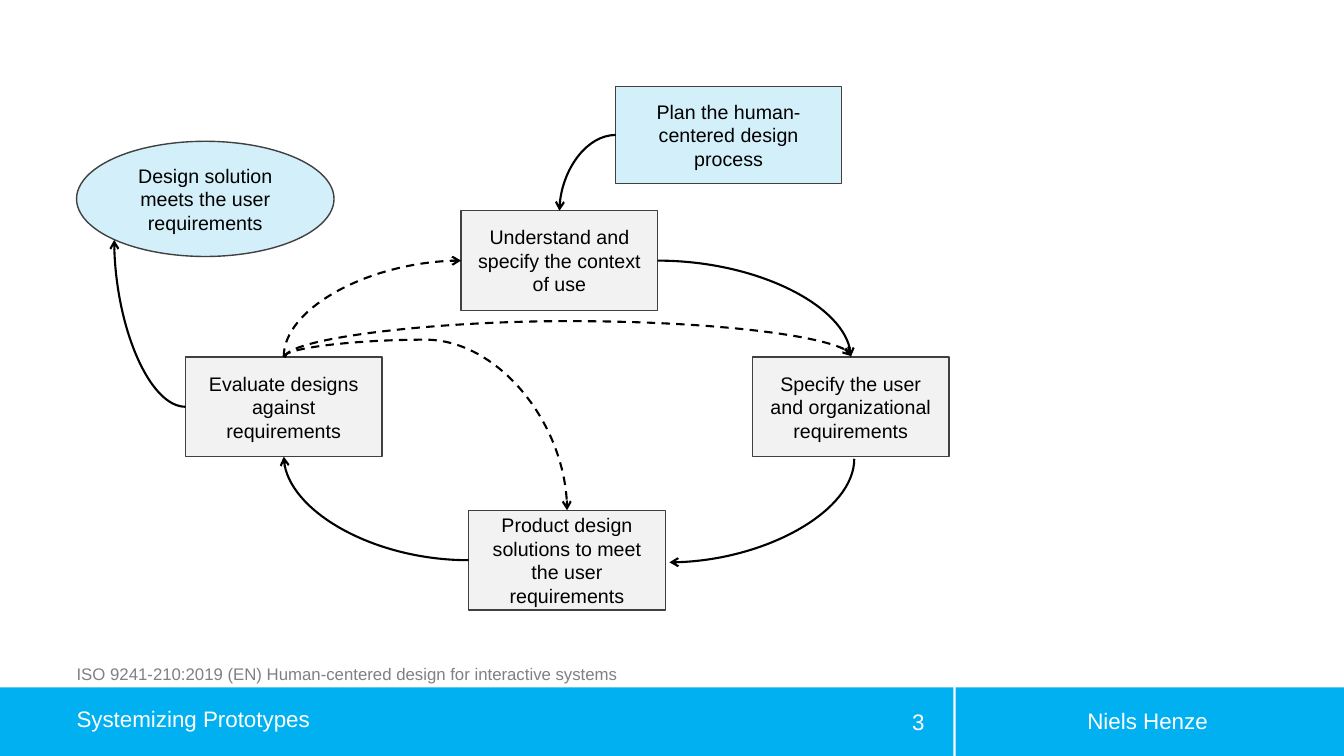
from lxml import etree
from pptx import Presentation
from pptx import util as u
from pptx.dml.color import RGBColor
from pptx.enum import dml, shapes, text
from pptx.oxml.ns import qn

BLACK = RGBColor(0, 0, 0)
WHITE = RGBColor(255, 255, 255)
BLUE = RGBColor(0x00, 0xB0, 0xF0)
PALE_BLUE = RGBColor(0xD3, 0xEF, 0xF9)
PALE_GREY = RGBColor(0xF2, 0xF2, 0xF2)
MID_GREY = RGBColor(0x80, 0x80, 0x80)
DARK_GREY = RGBColor(0x40, 0x40, 0x40)

RECTANGLE = shapes.MSO_SHAPE.RECTANGLE
OVAL = shapes.MSO_SHAPE.OVAL
LEFT, CENTER, RIGHT = text.PP_ALIGN.LEFT, text.PP_ALIGN.CENTER, text.PP_ALIGN.RIGHT

STEP_SIZE = (140.4, 71.3)
DEFAULT_INSETS = (7.2, 3.6, 7.2, 3.6)


def write(shape, words, size, color, align, insets=DEFAULT_INSETS, wrap=True):
    frame = shape.text_frame
    frame.word_wrap = wrap
    frame.vertical_anchor = text.MSO_ANCHOR.MIDDLE
    frame.margin_left, frame.margin_top, frame.margin_right, frame.margin_bottom = map(u.Pt, insets)
    para = frame.paragraphs[0]
    para.alignment = align
    span = para.add_run()
    span.text = words
    span.font.name = "Arial"
    span.font.size = u.Pt(size)
    span.font.color.rgb = color


def add_filled(page, kind, place, fill):
    shape = page.shapes.add_shape(kind, *map(u.Pt, place))
    shape.shadow.inherit = False
    shape.fill.solid()
    shape.fill.fore_color.rgb = fill
    shape.line.fill.background()
    return shape


def add_node(page, kind, place, fill, words):
    node = add_filled(page, kind, place, fill)
    node.line.color.rgb = DARK_GREY
    node.line.width = u.Pt(1)
    write(node, words, 14, BLACK, CENTER)
    return node


def add_step(page, left, top, words):
    return add_node(page, RECTANGLE, (left, top, *STEP_SIZE), PALE_GREY, words)


def add_label(page, place, words, size, color, align, **layout):
    box = page.shapes.add_textbox(*map(u.Pt, place))
    write(box, words, size, color, align, **layout)
    return box


def middle(node, side, dx=0, dy=0):
    """Point at the middle of a side, in points, moved by dx and dy."""
    across, down = {"top": (0.5, 0), "left": (0, 0.5),
                    "bottom": (0.5, 1), "right": (1, 0.5)}[side]
    return (u.Length(node.left + across * node.width).pt + dx,
            u.Length(node.top + down * node.height).pt + dy)


def add_curve(page, start, end, upright=False, dashed=False, crest=None):
    """Curved arrow; upright leaves vertically, crest is the height of its bend."""
    (x1, y1), (x2, y2) = start, end
    width, height = abs(x2 - x1), abs(y2 - y1)
    right, down = x2 > x1, y2 > y1
    if upright:
        width, height = height, width
        turn, flip_h, flip_v = (270 if right == down else 90), right, not down
    else:
        turn, flip_h, flip_v = (0 if right else 180), False, right != down
    left, top = (x1 + x2 - width) / 2, (y1 + y2 - height) / 2
    curve = page.shapes.add_connector(
        shapes.MSO_CONNECTOR.CURVE,
        *map(u.Pt, (left, top, left + width, top + height)))
    curve.line.color.rgb = BLACK
    curve.line.width = u.Pt(1.5)
    if dashed:
        curve.line.dash_style = dml.MSO_LINE.DASH

    props = curve.element.spPr
    frame = props.find(qn("a:xfrm"))
    frame.set("rot", str(turn * 60000))
    frame.set("flipH", str(int(flip_h)))
    frame.set("flipV", str(int(flip_v)))
    geometry = props.find(qn("a:prstGeom"))
    if crest is None:
        geometry.set("prst", "curvedConnector2")
    else:
        bend = round((crest - y1) / (y2 - y1) * 100000)
        etree.SubElement(geometry.find(qn("a:avLst")), qn("a:gd"),
                         name="adj1", fmla=f"val {bend}")
    etree.SubElement(props.find(qn("a:ln")), qn("a:tailEnd"), type="arrow")
    etree.SubElement(props, qn("a:effectLst"))


def add_footer(page):
    add_filled(page, RECTANGLE, (682.6, 491, 277.4, 49), BLUE)
    add_filled(page, RECTANGLE, (0, 491, 681.1, 49), BLUE)
    add_label(page, (691.9, 500.4, 255.6, 28.8), "Niels Henze", 16, WHITE, CENTER)
    add_label(page, (605.5, 501.1, 61.9, 28.8), "3", 16, WHITE, RIGHT)
    topic = add_label(page, (54.7, 500.4, 442.1, 28.8), "Systemizing Prototypes",
                      16, WHITE, LEFT, insets=(0, 0, 0, 0))
    topic.text_frame.paragraphs[0].line_spacing = 0.9


def add_cycle(page):
    evaluate = add_step(page, 132.5, 254.9, "Evaluate designs against requirements")
    produce = add_step(page, 334.8, 364.5,
                       "Product design solutions to meet the user requirements")
    specify = add_step(page, 537.5, 254.9,
                       "Specify the user and organizational requirements")
    understand = add_step(page, 329.4, 150.5, "Understand and specify the context of use")
    add_node(page, OVAL, (54.7, 100.9, 183.9, 82.3), PALE_BLUE,
             "Design solution meets the user requirements")
    plan = add_node(page, RECTANGLE, (439.8, 61.8, 161.4, 69.2), PALE_BLUE,
                    "Plan the human-centered design process")

    add_curve(page, middle(plan, "left"), middle(understand, "top"))
    add_curve(page, middle(understand, "right"), middle(specify, "top"))
    add_curve(page, middle(specify, "bottom", 2.5, 1.5),
              middle(produce, "right", 3, 1.5), upright=True)
    add_curve(page, middle(produce, "left"), middle(evaluate, "bottom"))
    add_curve(page, middle(evaluate, "left"), (81.6, 171.4))

    back = middle(evaluate, "top")
    add_curve(page, back, middle(understand, "left"), upright=True, dashed=True)
    add_curve(page, back, middle(produce, "top"), upright=True, dashed=True, crest=242.6)
    add_curve(page, middle(evaluate, "top", 0.7, 0.5), middle(specify, "top", 0.5, -0.5),
              upright=True, dashed=True, crest=229.2)


def main():
    deck = Presentation()
    deck.slide_width, deck.slide_height = u.Pt(960), u.Pt(540)
    page = deck.slides.add_slide(deck.slide_layouts[6])
    add_footer(page)
    add_cycle(page)
    add_label(page, (54.7, 470.2, 403.9, 21.8),
              "ISO 9241-210:2019 (EN) Human-centered design for interactive systems",
              12, MID_GREY, LEFT, insets=(0, 3.6, 7.2, 3.6), wrap=False)
    deck.save("out.pptx")


if __name__ == "__main__":
    main()
